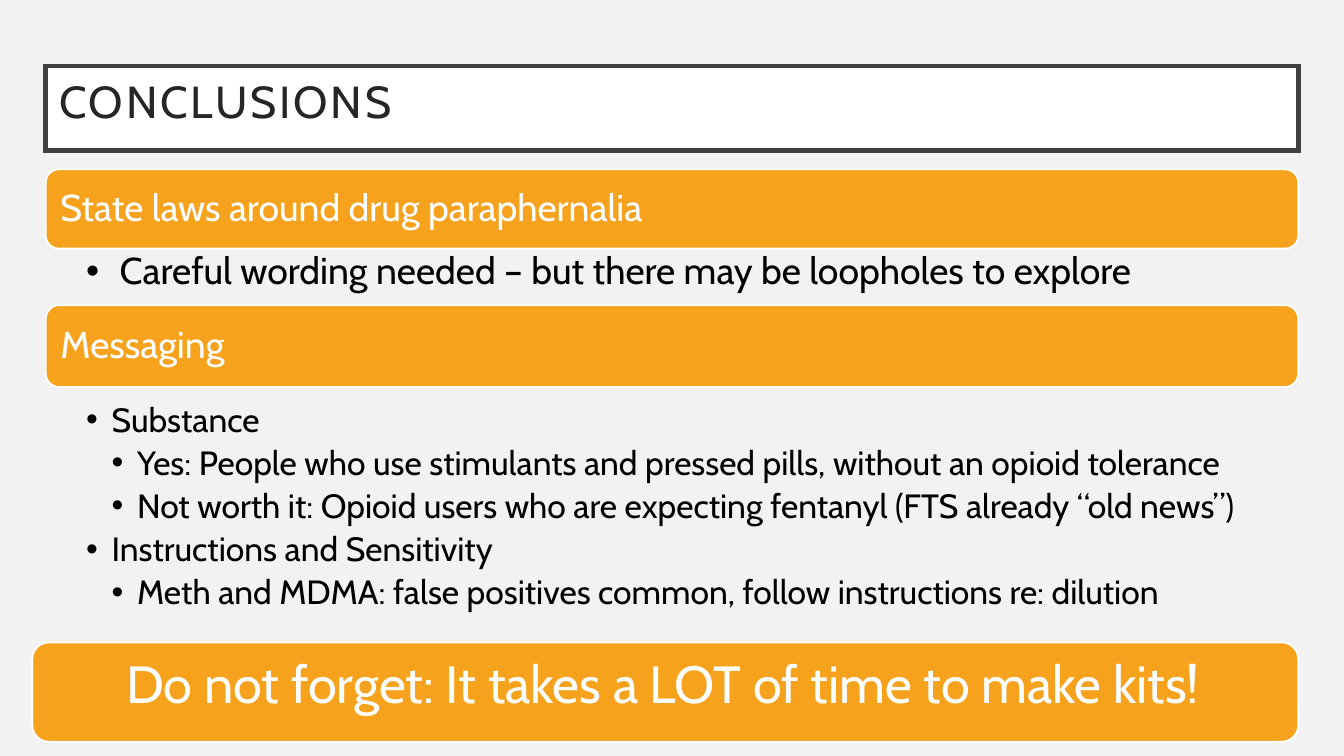
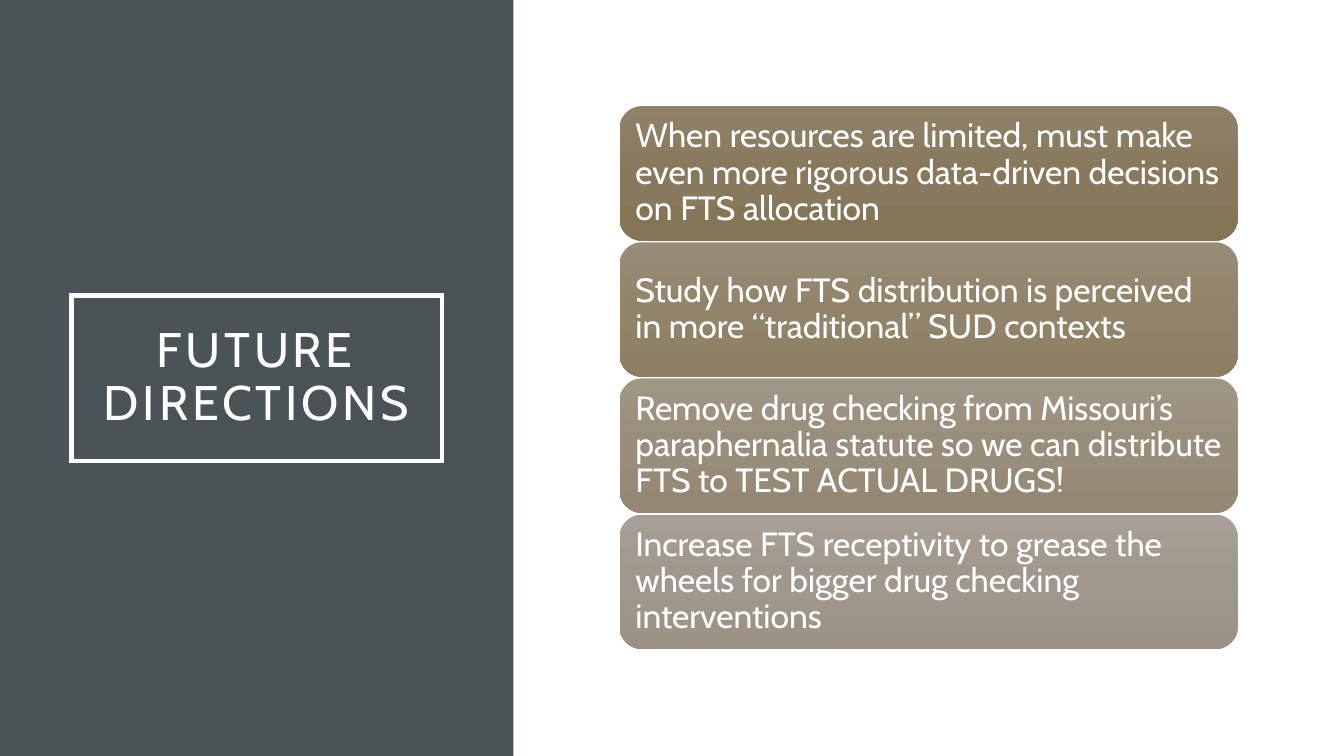
"""Build the conclusions and future-directions slides."""
from copy import deepcopy
from dataclasses import dataclass
from typing import NamedTuple, Optional, Sequence

from lxml.etree import SubElement
from pptx import Presentation
from pptx.dml.color import RGBColor
from pptx.enum.shapes import MSO_SHAPE as Shape
from pptx.enum.text import MSO_ANCHOR as Anchor, MSO_AUTO_SIZE as AutoSize, PP_ALIGN as Align
from pptx.oxml import parse_xml
from pptx.oxml.ns import nsdecls, qn
from pptx.util import Inches, Pt

WIDTH, HEIGHT = Inches(10), Inches(5.625)
COLUMN = WIDTH / 100
ROWS = HEIGHT / COLUMN
TWO_CONTENT, TITLE_ONLY = 3, 5


@dataclass(frozen=True)
class Theme:
    font: str = "Cabin"
    white: str = "FFFFFF"
    pale: str = "F2F2F2"
    slate: str = "4A5356"
    orange: str = "F6A21D"
    frame: str = "404040"
    heading: str = "262626"
    ink: str = "000000"
    title_size: int = 24
    side_title_size: int = 26
    band_size: int = 20
    body_size: int = 18
    callout_size: int = 28
    frame_width: float = 2.5
    band_line: float = 1
    line_spacing: float = 0.9
    list_gap: float = 0.2


THEME = Theme()


class Box(NamedTuple):
    left: float
    top: float
    width: float
    height: float


class Insets(NamedTuple):
    left: float
    top: float
    right: float
    bottom: float


class Type(NamedTuple):
    size: float
    color: str
    align: Align = Align.LEFT
    tracking: float = 0


class Item(NamedTuple):
    text: str
    level: int = 1


class Band(NamedTuple):
    text: str
    box: Box
    type: Type
    insets: Insets


class Card(NamedTuple):
    text: str
    shades: Sequence[str]


BAND_TYPE = Type(THEME.band_size, THEME.white)
BAND_INSETS = Insets(0.8, 0.8, 0.8, 0.8)
BANDS = (
    Band("State laws around drug paraphernalia", Box(3.4, 12.6, 93.2, 5.9), BAND_TYPE, BAND_INSETS),
    Band("Messaging", Box(3.4, 22.7, 93.2, 6.1), BAND_TYPE, BAND_INSETS),
    Band("Do not forget: It takes a LOT of time to make kits!", Box(2.4, 47.8, 94.2, 7.4),
         Type(THEME.callout_size, THEME.white, Align.CENTER), Insets(0.8, 0.8, 1.2, 1.6)),
)
LAW_POINTS = (Item("Careful wording needed – but there may be loopholes to explore"),)
MESSAGE_POINTS = (
    Item("Substance"),
    Item("Yes: People who use stimulants and pressed pills, without an opioid tolerance", 2),
    Item("Not worth it: Opioid users who are expecting fentanyl (FTS already “old news”)", 2),
    Item("Instructions and Sensitivity"),
    Item("Meth and MDMA: false positives common, follow instructions re: dilution", 2),
)
CARDS = (
    Card("When resources are limited, must make even more rigorous data-driven decisions on FTS allocation",
         ("8F8269", "88795C", "847557")),
    Card("Study how FTS distribution is perceived in more “traditional” SUD contexts",
         ("998C76", "92846A", "8D7F64")),
    Card("Remove drug checking from Missouri’s paraphernalia statute so we can distribute FTS to TEST ACTUAL DRUGS!",
         ("A09685", "998E7B", "948875")),
    Card("Increase FTS receptivity to grease the wheels for bigger drug checking interventions",
         ("A79F95", "A0988C", "9B9285")),
)
FIRST_CARD = Box(46.1, 7.9, 46, 10)
CARD_PITCH = 10.13


def cells(count: float) -> int:
    """Convert grid cells to a length."""
    return round(count * COLUMN)


def rgb(value: str) -> RGBColor:
    """Read a theme colour."""
    return RGBColor.from_string(value)


def place(shape, box: Box) -> None:
    """Move a shape to its box on the grid."""
    shape.left, shape.top, shape.width, shape.height = map(cells, box)


def set_frame(shape, insets: Insets, anchor: Anchor) -> None:
    """Fix the wrapping, anchoring and insets of a shape's text."""
    frame = shape.text_frame
    frame.word_wrap = True
    frame.auto_size = AutoSize.NONE
    frame.vertical_anchor = anchor
    frame.margin_left, frame.margin_top, frame.margin_right, frame.margin_bottom = map(cells, insets)


def set_type(paragraph, style: Type) -> None:
    """Apply a type style to a paragraph."""
    paragraph.alignment = style.align
    paragraph.line_spacing = THEME.line_spacing
    paragraph.space_before = Pt(0)
    font = paragraph.font
    font.name, font.size, font.bold = THEME.font, Pt(style.size), False
    font.color.rgb = rgb(style.color)
    if style.tracking:
        font._element.set("spc", str(round(style.tracking * 100)))


def write(shape, text: str, style: Type, insets: Insets, anchor: Anchor = Anchor.MIDDLE) -> None:
    """Put one styled paragraph in a shape."""
    set_frame(shape, insets, anchor)
    shape.text_frame.text = text
    set_type(shape.text_frame.paragraphs[0], style)


def add_panel(slide, kind: Shape, box: Box, fill: Optional[str] = None, line: Optional[str] = None):
    """Add a flat preset shape with optional fill and line."""
    panel = slide.shapes.add_shape(kind, *map(cells, box))
    panel.shadow.inherit = False
    if fill:
        panel.fill.solid()
        panel.fill.fore_color.rgb = rgb(fill)
    if line:
        panel.line.color.rgb = rgb(line)
        panel.line.width = Pt(THEME.band_line)
    else:
        panel.line.fill.background()
    return panel


def add_band(slide, band: Band) -> None:
    """Draw an orange band with its text."""
    shape = add_panel(slide, Shape.ROUNDED_RECTANGLE, band.box, THEME.orange, THEME.white)
    write(shape, band.text, band.type, band.insets)


def add_card(slide, card: Card, box: Box) -> None:
    """Draw a card shaded from top to bottom."""
    shape = add_panel(slide, Shape.ROUNDED_RECTANGLE, box)
    shape.fill.gradient()
    shape.fill.gradient_angle = 270
    stops = shape._element.spPr.find(qn("a:gradFill")).find(qn("a:gsLst"))
    stops.insert(1, deepcopy(stops[0]))
    for index, (stop, shade) in enumerate(zip(shape.fill.gradient_stops, card.shades)):
        stop.position = index / (len(card.shades) - 1)
        stop.color.rgb = rgb(shade)
    write(shape, card.text, Type(THEME.body_size, THEME.white), Insets(0.7, 0.7, 0.7, 0.7))


def fill_list(body, box: Box, items: Sequence[Item], size: float, hang: float, insets: Insets) -> None:
    """Fill a body placeholder with a bulleted list."""
    place(body, box)
    set_frame(body, insets, Anchor.TOP)
    body.text_frame.text = "\n".join(item.text for item in items)
    for paragraph, item in zip(body.text_frame.paragraphs, items):
        paragraph.level = item.level
        set_type(paragraph, Type(size, THEME.ink))
        paragraph.space_after = Pt(size * THEME.list_gap)
        props = paragraph._p.get_or_add_pPr()
        props.set("marL", str(cells(hang * item.level)))
        props.set("indent", str(-cells(hang)))
        bullet = parse_xml(f'<a:buChar {nsdecls("a")} char="•"/>')
        props.insert_element_before(bullet, "a:tabLst", "a:defRPr", "a:extLst")


def set_title(slide, text: str, box: Box, style: Type, inset: float, anchor: Anchor,
              line: str, fill: Optional[str] = None) -> None:
    """Format the title placeholder as a framed heading."""
    title = slide.shapes.title
    place(title, box)
    if fill:
        title.fill.solid()
        title.fill.fore_color.rgb = rgb(fill)
    title.line.color.rgb = rgb(line)
    title.line.width = Pt(THEME.frame_width)
    SubElement(title._element.spPr.find(qn("a:ln")), qn("a:miter"), lim="800000")
    write(title, text, style, Insets(inset, inset, inset, inset), anchor)


def add_slide(deck, layout: int, background: str):
    """Add a slide with a plain background."""
    slide = deck.slides.add_slide(deck.slide_layouts[layout])
    slide.background.fill.solid()
    slide.background.fill.fore_color.rgb = rgb(background)
    return slide


def build_conclusions(deck) -> None:
    """Build the conclusions slide."""
    slide = add_slide(deck, TWO_CONTENT, THEME.pale)
    set_title(slide, "CONCLUSIONS", Box(3.4, 4.9, 93.2, 6.3),
              Type(THEME.title_size, THEME.heading, tracking=1.5), 1, Anchor.TOP,
              THEME.frame, THEME.white)
    for band in BANDS:
        add_band(slide, band)
    laws, messages = slide.placeholders[1], slide.placeholders[2]
    fill_list(laws, Box(3.4, 18.5, 93.2, 7.8), LAW_POINTS, THEME.band_size, 2.5,
              Insets(3, 0.3, 1.6, 0.3))
    fill_list(messages, Box(3.4, 29.7, 93.2, 16.1), MESSAGE_POINTS, THEME.body_size, 1.9,
              Insets(3, 0.3, 1.4, 0.3))


def build_directions(deck) -> None:
    """Build the future-directions slide."""
    slide = add_slide(deck, TITLE_ONLY, THEME.white)
    sidebar = add_panel(slide, Shape.RECTANGLE, Box(0, 0, 38.2, ROWS), THEME.slate)
    slide.shapes.title._element.addprevious(sidebar._element)
    set_title(slide, "FUTURE DIRECTIONS", Box(5.3, 22, 27.6, 12.3),
              Type(THEME.side_title_size, THEME.white, Align.CENTER, 2), 2, Anchor.MIDDLE,
              THEME.white)
    for row, card in enumerate(CARDS):
        add_card(slide, card, FIRST_CARD._replace(top=FIRST_CARD.top + row * CARD_PITCH))


def main() -> None:
    """Build and save the deck."""
    deck = Presentation()
    deck.slide_width, deck.slide_height = WIDTH, HEIGHT
    build_conclusions(deck)
    build_directions(deck)
    deck.save("out.pptx")


if __name__ == "__main__":
    main()
